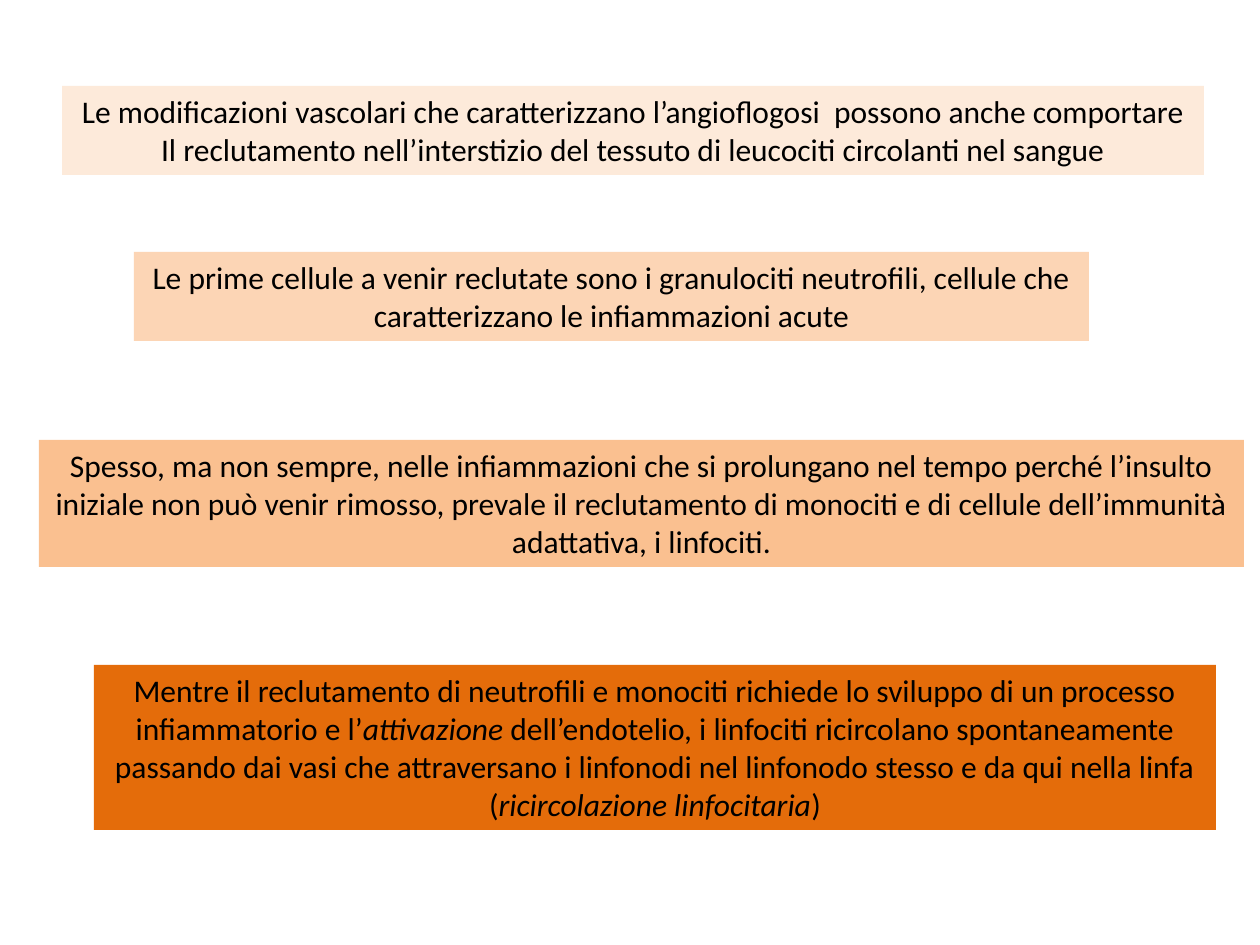
import dataclasses

import pptx
import pptx.dml.color
import pptx.enum.text
import pptx.util

SCALE = pptx.util.Inches(1) / 126  # EMU in one px


@dataclasses.dataclass
class Box:
    left: int
    top: int
    width: int
    height: int
    fill: str
    lines: list[str]  # parts between asterisks are italic


BOXES = [
    Box(62, 86, 1142, 89, "FDEADA", [
        "Le modificazioni vascolari che caratterizzano l’angioflogosi  possono anche comportare",
        "Il reclutamento nell’interstizio del tessuto di leucociti circolanti nel sangue",
    ]),
    Box(134, 252, 955, 89, "FCD5B5", [
        "Le prime cellule a venir reclutate sono i granulociti neutrofili, cellule che",
        "caratterizzano le infiammazioni acute",
    ]),
    Box(39, 440, 1205, 127, "FAC090", [
        "Spesso, ma non sempre, nelle infiammazioni che si prolungano nel tempo perché l’insulto",
        "iniziale non può venir rimosso, prevale il reclutamento di monociti e di cellule dell’immunità",
        "adattativa, i linfociti.",
    ]),
    Box(94, 665, 1122, 165, "E46C0A", [
        "Mentre il reclutamento di neutrofili e monociti richiede lo sviluppo di un processo",
        "infiammatorio e l’*attivazione* dell’endotelio, i linfociti ricircolano spontaneamente",
        "passando dai vasi che attraversano i linfonodi nel linfonodo stesso e da qui nella linfa",
        "(*ricircolazione linfocitaria*)",
    ]),
]
FONT = {"name": "Calibri", "size": pptx.util.Pt(18)}
FRAME = {"word_wrap": False,
         "auto_size": pptx.enum.text.MSO_AUTO_SIZE.SHAPE_TO_FIT_TEXT}


def px(size: int) -> int:
    return round(size * SCALE)


def paint(fill, code: str) -> None:
    fill.solid()
    fill.fore_color.rgb = pptx.dml.color.RGBColor.from_string(code)


def style(item, form: dict) -> None:
    for key, value in form.items():
        setattr(item, key, value)


def write(para, line: str) -> None:
    para.alignment = pptx.enum.text.PP_ALIGN.CENTER
    for place, part in enumerate(line.split("*")):
        run = para.add_run()
        run.text = part
        style(run.font, FONT | {"italic": place % 2 == 1})
        paint(run.font.fill, "000000")


def draw(slide, box: Box) -> None:
    area = map(px, (box.left, box.top, box.width, box.height))
    shape = slide.shapes.add_textbox(*area)
    paint(shape.fill, box.fill)
    frame = shape.text_frame
    style(frame, FRAME)
    for place, line in enumerate(box.lines):
        write(frame.add_paragraph() if place else frame.paragraphs[0], line)


def main() -> None:
    deck = pptx.Presentation()
    style(deck, {"slide_width": px(1260), "slide_height": px(945)})
    slide = deck.slides.add_slide(deck.slide_layouts[6])  # blank layout

    # Four text boxes, from pale to deep orange
    for box in BOXES:
        draw(slide, box)
    deck.save("out.pptx")


if __name__ == "__main__":
    main()
